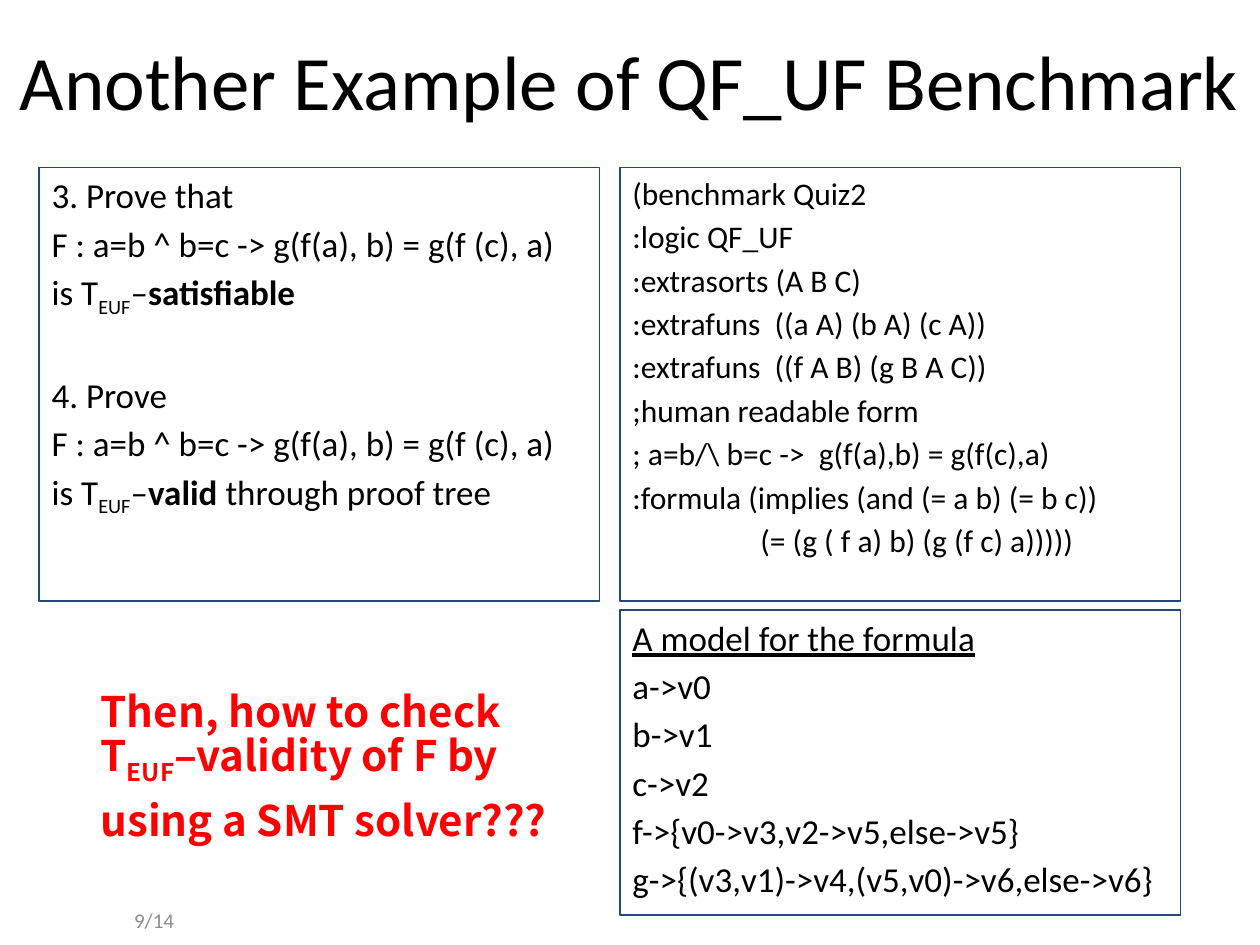
from pptx import Presentation
from pptx.dml.color import RGBColor
from pptx.enum.shapes import MSO_SHAPE
from pptx.enum.text import MSO_ANCHOR, MSO_AUTO_SIZE, PP_ALIGN
from pptx.util import Cm, Pt

BLACK = RGBColor(0x00, 0x00, 0x00)
NAVY = RGBColor(0x1F, 0x49, 0x7D)
GREY = RGBColor(0x8C, 0x8C, 0x8C)
RED = RGBColor(0xFF, 0x00, 0x00)
BODY_FONT, CALLOUT_FONT = "Calibri", "Noto Sans CJK KR"

# Run styles
PLAIN, BOLD, SUB, UNDERLINE = "plain", "bold", "sub", "underline"

FORMULA = "F : a=b ^ b=c -> g(f(a), b) = g(f (c), a)"
T_EUF = [("is T", PLAIN), ("EUF", SUB), ("–", PLAIN)]
FIRST_TASK = [
    "3. Prove that",
    FORMULA,
    T_EUF + [("satisfiable", BOLD)],
]
SECOND_TASK = [
    "4. Prove",
    FORMULA,
    T_EUF + [("valid", BOLD), (" through proof tree", PLAIN)],
]
BENCHMARK = [
    "(benchmark Quiz2",
    ":logic QF_UF",
    ":extrasorts (A B C)",
    ":extrafuns  ((a A) (b A) (c A))",
    ":extrafuns  ((f A B) (g B A C))",
    ";human readable form",
    "; a=b/\\ b=c ->  g(f(a),b) = g(f(c),a)",
    ":formula (implies (and (= a b) (= b c))",
    "                  (= (g ( f a) b) (g (f c) a)))))",
]
MODEL = [
    [("A model for the formula", UNDERLINE)],
    "a->v0",
    "b->v1",
    "c->v2",
    "f->{v0->v3,v2->v5,else->v5}",
    "g->{(v3,v1)->v4,(v5,v0)->v6,else->v6}",
]
QUESTION = [
    "Then, how to check",
    [("T", PLAIN), ("EUF", SUB), ("–validity of F by", PLAIN)],
    "using a SMT solver???",
]


def set_font(p, size, color, name=BODY_FONT, bold=False):
    p.font.name, p.font.size, p.font.bold = name, Pt(size), bold
    p.font.color.rgb = color


def add_lines(tf, lines):
    """Write one paragraph per line; a line is a string or (text, style) runs."""
    for i, line in enumerate(lines):
        p = tf.paragraphs[0] if i == 0 else tf.add_paragraph()
        p.alignment = PP_ALIGN.LEFT
        for text, style in [(line, PLAIN)] if isinstance(line, str) else line:
            r = p.add_run()
            r.text = text
            if style == BOLD:
                r.font.bold = True
            elif style == UNDERLINE:
                r.font.underline = True
            elif style == SUB:
                r.font._element.set("baseline", "-25000")
    return tf.paragraphs


def fill_title(s, box, text):
    sp = s.shapes.title
    sp.left, sp.top, sp.width, sp.height = box
    tf = sp.text_frame
    tf.text = text
    tf.auto_size = MSO_AUTO_SIZE.NONE
    tf.vertical_anchor = MSO_ANCHOR.MIDDLE
    tf.paragraphs[0].alignment = PP_ALIGN.CENTER
    set_font(tf.paragraphs[0], 44, BLACK)


def add_panel(s, box, lines, size, gap):
    sp = s.shapes.add_shape(MSO_SHAPE.RECTANGLE, *box)
    sp.shadow.inherit = False
    sp.fill.background()
    sp.line.color.rgb = NAVY
    sp.line.width = Pt(0.75)
    tf = sp.text_frame
    tf.word_wrap = True
    tf.vertical_anchor = MSO_ANCHOR.TOP
    paragraphs = add_lines(tf, lines)
    for i, p in enumerate(paragraphs):
        pPr = p._p.get_or_add_pPr()
        pPr.set("marL", str(Cm(0.95)))
        pPr.set("indent", str(-Cm(0.95)))
        p.space_before = Pt(gap if i else 0)
        set_font(p, size, BLACK)
    return paragraphs


def add_question(s, box):
    tf = s.shapes.add_textbox(*box).text_frame
    tf.word_wrap = True
    # The last line sits lower, clear of the subscript above it
    for p, pitch in zip(add_lines(tf, QUESTION), (29, 29, 33)):
        p.line_spacing = Pt(pitch)
        set_font(p, 24, RED, CALLOUT_FONT, bold=True)


def add_page_number(s, box, text):
    tf = s.shapes.add_textbox(*box).text_frame
    tf.word_wrap = True
    tf.vertical_anchor = MSO_ANCHOR.MIDDLE
    p = add_lines(tf, [text])[0]
    p.alignment = PP_ALIGN.RIGHT
    set_font(p, 12, GREY)


def main():
    prs = Presentation()
    prs.slide_width, prs.slide_height = Cm(25.4), Cm(19.05)
    s = prs.slides.add_slide(prs.slide_layouts[5])

    left, right, width = Cm(0.79), Cm(12.5), Cm(11.3)
    top, height = Cm(3.38), Cm(8.74)

    fill_title(s, (0, Cm(0.41), prs.slide_width, Cm(2.39)),
               "Another Example of QF_UF Benchmark")
    add_page_number(s, (Cm(1.27), Cm(18.03), Cm(2.49), Cm(1.02)), "9/14")
    tasks = add_panel(s, (left, top, width, height),
                      FIRST_TASK + SECOND_TASK, 20, 3.6)
    tasks[len(FIRST_TASK)].space_before = Pt(31.6)
    add_panel(s, (right, top, width, height), BENCHMARK, 18, 3.2)
    add_panel(s, (right, top + height + Cm(0.18), width, Cm(6.15)), MODEL, 20, 3.6)
    add_question(s, (Cm(1.78), Cm(13.69), Cm(9.78), Cm(3.33)))
    prs.save("out.pptx")


if __name__ == "__main__":
    main()
